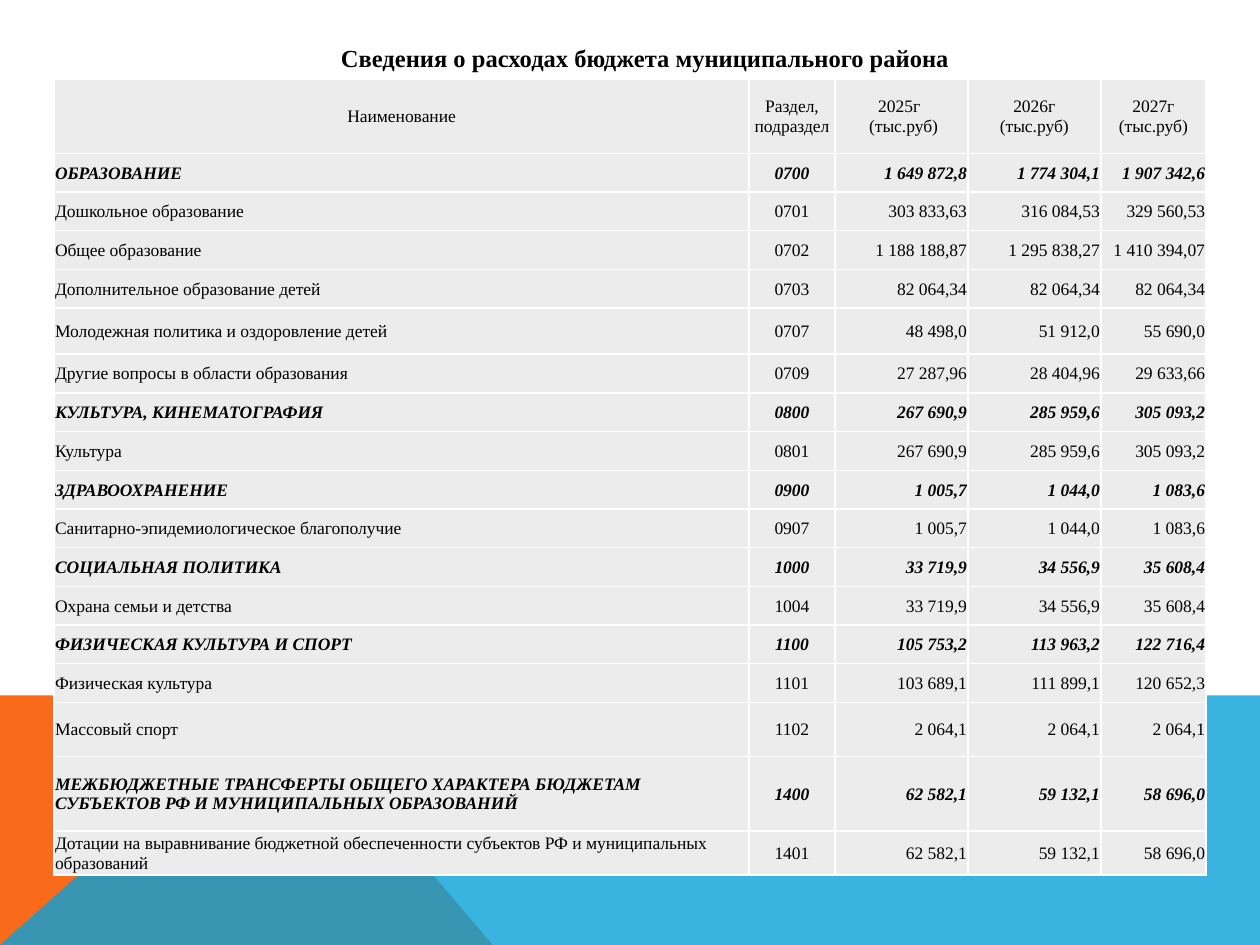
from lxml import etree
from pptx import Presentation
from pptx.dml.color import RGBColor
from pptx.enum.text import MSO_ANCHOR, PP_ALIGN
from pptx.oxml.ns import qn
from pptx.util import Cm, Pt

LEFT, CENTER, RIGHT = PP_ALIGN.LEFT, PP_ALIGN.CENTER, PP_ALIGN.RIGHT
MIDDLE = MSO_ANCHOR.MIDDLE

# Content
TITLE = "Сведения о расходах бюджета муниципального района"
HEADINGS = ["Наименование", "Раздел, подраздел", "2025г \n (тыс.руб)",
            "2026г\n(тыс.руб)", "2027г\n(тыс.руб)"]
EXPENSES = [
    ("ОБРАЗОВАНИЕ", "0700", "1 649 872,8", "1 774 304,1", "1 907 342,6"),
    ("Дошкольное образование", "0701", "303 833,63", "316 084,53", "329 560,53"),
    ("Общее образование", "0702", "1 188 188,87", "1 295 838,27", "1 410 394,07"),
    ("Дополнительное образование детей", "0703", "82 064,34", "82 064,34", "82 064,34"),
    ("Молодежная политика и оздоровление детей", "0707", "48 498,0", "51 912,0", "55 690,0"),
    ("Другие вопросы в области образования", "0709", "27 287,96", "28 404,96", "29 633,66"),
    ("КУЛЬТУРА, КИНЕМАТОГРАФИЯ", "0800", "267 690,9", "285 959,6", "305 093,2"),
    ("Культура", "0801", "267 690,9", "285 959,6", "305 093,2"),
    ("ЗДРАВООХРАНЕНИЕ", "0900", "1 005,7", "1 044,0", "1 083,6"),
    ("Санитарно-эпидемиологическое благополучие", "0907", "1 005,7", "1 044,0", "1 083,6"),
    ("СОЦИАЛЬНАЯ ПОЛИТИКА", "1000", "33 719,9", "34 556,9", "35 608,4"),
    ("Охрана семьи и детства", "1004", "33 719,9", "34 556,9", "35 608,4"),
    ("ФИЗИЧЕСКАЯ КУЛЬТУРА И СПОРТ", "1100", "105 753,2", "113 963,2", "122 716,4"),
    ("Физическая культура", "1101", "103 689,1", "111 899,1", "120 652,3"),
    ("Массовый спорт", "1102", "2 064,1", "2 064,1", "2 064,1"),
    ("МЕЖБЮДЖЕТНЫЕ ТРАНСФЕРТЫ ОБЩЕГО ХАРАКТЕРА БЮДЖЕТАМ СУБЪЕКТОВ РФ "
     "И МУНИЦИПАЛЬНЫХ ОБРАЗОВАНИЙ", "1400", "62 582,1", "59 132,1", "58 696,0"),
    ("Дотации на выравнивание бюджетной обеспеченности субъектов РФ и муниципальных "
     "образований", "1401", "62 582,1", "59 132,1", "58 696,0"),
]

# Theme and measures (cm)
THEME = {"font": "Times New Roman", "text": "000000", "cell": "ECECEC", "border": "FFFFFF",
         "orange": "F96A1B", "blue": "08A1D9", "title_size": 14, "table_size": 10}
WIDTH, HEIGHT = 25.4, 19.05
BAND_TOP, PEAK_X, FOOT_X = 14.02, 5.66, 9.93
TABLE_LEFT, TABLE_TOP = 1.09, 1.59
COLUMN_WIDTHS = [14.01, 1.73, 2.68, 2.68, 2.12]
ROW_HEIGHT = 0.78
SPECIAL_HEIGHTS = {0: 1.5, 5: 0.93, 15: 1.09, 16: 1.5, 17: 0.89}


def put_text(frame, text, size, align=LEFT, bold=False, italic=False):
    frame.word_wrap = True
    frame.text = text
    for paragraph in frame.paragraphs:
        paragraph.alignment = align
        for run in paragraph.runs:
            font = run.font
            font.name, font.size = THEME["font"], Pt(size)
            font.bold, font.italic = bold, italic
            font.color.rgb = RGBColor.from_string(THEME["text"])


def add_band(slide, points, color, opacity=100):
    start, *rest = [(Cm(x), Cm(y)) for x, y in points]
    builder = slide.shapes.build_freeform(*start)
    builder.add_line_segments(rest, close=True)
    band = builder.convert_to_shape()
    band.shadow.inherit = False
    band.line.fill.background()
    band.fill.solid()
    band.fill.fore_color.rgb = RGBColor.from_string(color)
    if opacity < 100:
        tone = band._element.spPr.find(qn("a:solidFill"))[0]
        etree.SubElement(tone, qn("a:alpha"), val=str(opacity * 1000))


def style_cell(cell):
    cell.vertical_anchor = MIDDLE
    cell.margin_left = cell.margin_right = cell.margin_top = Cm(0.02)
    cell.margin_bottom = 0
    properties = cell._tc.get_or_add_tcPr()
    for side in ("lnL", "lnR", "lnT", "lnB"):
        border = etree.SubElement(properties, qn(f"a:{side}"), w=str(Pt(1)))
        paint = etree.SubElement(border, qn("a:solidFill"))
        etree.SubElement(paint, qn("a:srgbClr"), val=THEME["border"])
    cell.fill.solid()
    cell.fill.fore_color.rgb = RGBColor.from_string(THEME["cell"])


def add_expense_table(slide):
    rows = [HEADINGS, *EXPENSES]
    heights = [SPECIAL_HEIGHTS.get(index, ROW_HEIGHT) for index in range(len(rows))]
    table = slide.shapes.add_table(
        len(rows), len(HEADINGS), Cm(TABLE_LEFT), Cm(TABLE_TOP),
        Cm(sum(COLUMN_WIDTHS)), Cm(sum(heights))).table
    table.first_row = table.horz_banding = False
    for column, width in zip(table.columns, COLUMN_WIDTHS):
        column.width = Cm(width)
    alignments = [LEFT, CENTER, RIGHT, RIGHT, RIGHT]
    for r, (values, height) in enumerate(zip(rows, heights)):
        table.rows[r].height = Cm(height)
        is_section = values[0].isupper()
        for c, value in enumerate(values):
            cell = table.cell(r, c)
            style_cell(cell)
            put_text(cell.text_frame, value, THEME["table_size"],
                     align=alignments[c] if r else CENTER,
                     bold=is_section, italic=is_section)


def main():
    deck = Presentation()
    deck.slide_width, deck.slide_height = Cm(WIDTH), Cm(HEIGHT)
    slide = deck.slides.add_slide(deck.slide_layouts[6])

    # Coloured bands at the foot
    add_band(slide, [(0, HEIGHT), (0, BAND_TOP), (PEAK_X, BAND_TOP), (FOOT_X, HEIGHT)],
             THEME["orange"])
    add_band(slide, [(0, HEIGHT), (PEAK_X, BAND_TOP), (WIDTH, BAND_TOP), (WIDTH, HEIGHT)],
             THEME["blue"], opacity=80)

    # Expenses by section and year
    add_expense_table(slide)

    # Title
    title = slide.shapes.add_textbox(Cm(2.11), Cm(0.74), Cm(21.79), Cm(0.86))
    put_text(title.text_frame, TITLE, THEME["title_size"], align=CENTER, bold=True)

    deck.save("out.pptx")


if __name__ == "__main__":
    main()
